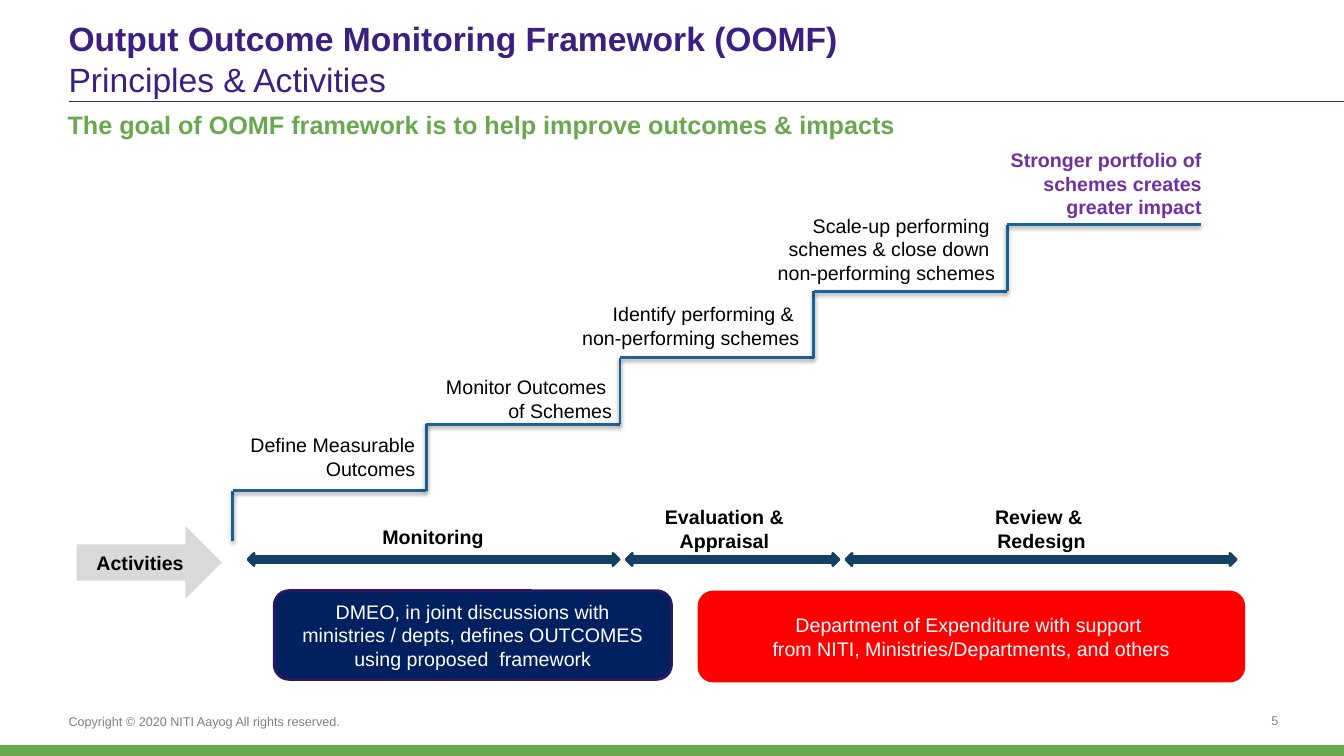
from typing import NamedTuple

from lxml import etree
from pptx import Presentation
from pptx.dml.color import RGBColor
from pptx.enum.shapes import MSO_CONNECTOR, MSO_SHAPE
from pptx.enum.text import MSO_ANCHOR, PP_ALIGN
from pptx.oxml.ns import qn
from pptx.util import Inches, Pt

LEFT, CENTER, RIGHT = PP_ALIGN.LEFT, PP_ALIGN.CENTER, PP_ALIGN.RIGHT
TOP, MIDDLE, BOTTOM = MSO_ANCHOR.TOP, MSO_ANCHOR.MIDDLE, MSO_ANCHOR.BOTTOM
RECT, ROUNDED = MSO_SHAPE.RECTANGLE, MSO_SHAPE.ROUNDED_RECTANGLE
RIGHT_ARROW, DOUBLE_ARROW = MSO_SHAPE.RIGHT_ARROW, MSO_SHAPE.LEFT_RIGHT_ARROW
STRAIGHT = MSO_CONNECTOR.STRAIGHT

COLORS = {
    "title": "3B2082", "green": "6AA84F", "gray": "D9D9D9", "footer": "7F7F7F",
    "number": "808080", "step": "1D6294", "phase": "134163", "navy": "002060",
    "navy_edge": "2C1860", "red": "FF0000", "impact": "7030A0",
    "black": "000000", "white": "FFFFFF",
}
FONT = "Arial"

STEP_LEFT, STEP_TOP = 2.31, 4.87
STEP_WIDTH, STEP_RISE, FIRST_RISE = 1.92, 0.66, 0.5
PHASE_TOP, PHASE_HEIGHT = 5.49, 0.12


class Box(NamedTuple):
    left: float
    top: float
    width: float
    height: float


class Step(NamedTuple):
    text: str
    box: Box
    color: str = "black"
    bold: bool = False


class Phase(NamedTuple):
    text: str
    label: Box
    arrow_left: float
    arrow_width: float


class Owner(NamedTuple):
    text: str
    box: Box
    fill: str
    edge: str | None


STEPS = [
    Step("Define Measurable Outcomes", Box(2, 4.25, 2.17, 0.57)),
    Step("Monitor Outcomes \nof Schemes", Box(4.07, 3.67, 2.05, 0.57)),
    Step("Identify performing & \nnon-performing schemes", Box(5.57, 2.95, 2.41, 0.57)),
    Step("Scale-up performing \nschemes & close down \nnon-performing schemes",
         Box(7.17, 2.07, 2.75, 0.81)),
    Step("Stronger portfolio of schemes creates greater impact",
         Box(9.71, 1.42, 2.26, 0.81), "impact", True),
]
PHASES = [
    Phase("Monitoring", Box(3.37, 5.16, 1.85, 0.34), 2.46, 3.68),
    Phase("Evaluation & Appraisal", Box(6.08, 4.96, 2.21, 0.57), 6.21, 2.11),
    Phase("Review & \nRedesign", Box(9.21, 4.96, 2.24, 0.57), 8.39, 3.87),
]
OWNERS = [
    Owner("DMEO, in joint discussions with ministries / depts, defines OUTCOMES "
          "using proposed  framework", Box(2.72, 5.86, 3.94, 0.88), "navy", "navy_edge"),
    Owner("Department of Expenditure with support \n"
          "from NITI, Ministries/Departments, and others",
          Box(6.92, 5.86, 5.43, 0.91), "red", None),
]


def rgb(name: str) -> RGBColor:
    return RGBColor.from_string(COLORS[name])


def write(sp, text: str, *, size: float = 14, color: str = "black", bold: bool = False,
          align=LEFT, anchor=MIDDLE, after: float = 0) -> None:
    """Add one paragraph to a shape; a newline becomes a line break."""
    tf = sp.text_frame
    tf.word_wrap = True
    tf.vertical_anchor = anchor
    p = tf.add_paragraph() if tf.text else tf.paragraphs[0]
    p.alignment = align
    p.space_after = Pt(after)
    for i, line in enumerate(text.split("\n")):
        if i:
            p.add_line_break()
        r = p.add_run()
        r.text = line
        r.font.name, r.font.size, r.font.bold = FONT, Pt(size), bold
        r.font.color.rgb = rgb(color)


def add_text_box(s, box: Box, inset: float = 0):
    sp = s.shapes.add_textbox(*map(Inches, box))
    tf = sp.text_frame
    tf.margin_left = tf.margin_right = tf.margin_top = tf.margin_bottom = Inches(inset)
    return sp


def add_shape(s, kind, box: Box, fill: str, edge: str | None = None):
    sp = s.shapes.add_shape(kind, *map(Inches, box))
    sp.shadow.inherit = False
    sp.fill.solid()
    sp.fill.fore_color.rgb = rgb(fill)
    if edge:
        sp.line.color.rgb = rgb(edge)
        sp.line.width = Pt(2)
    else:
        sp.line.fill.background()
    return sp


def add_line(s, x1: float, y1: float, x2: float, y2: float, color: str,
             width: float, shadow: bool = False) -> None:
    line = s.shapes.add_connector(STRAIGHT, *map(Inches, (x1, y1, x2, y2)))
    line.line.color.rgb = rgb(color)
    line.line.width = Pt(width)
    effects = etree.SubElement(line._element.spPr, qn("a:effectLst"))
    if shadow:
        outer = etree.SubElement(effects, qn("a:outerShdw"), blurRad=str(Pt(3)),
                                 dist=str(Pt(1.6)), dir="5400000", rotWithShape="0")
        shade = etree.SubElement(outer, qn("a:srgbClr"), val=COLORS["black"])
        etree.SubElement(shade, qn("a:alpha"), val="38000")


def add_frame(s) -> None:
    """Draw the heading, the footer and their rules."""
    add_line(s, 0.68, 1.01, 13.33, 1.01, "title", 1)
    write(add_text_box(s, Box(11.54, 7.03, 1.14, 0.19)), "5",
          size=9, color="number", align=RIGHT, anchor=BOTTOM)
    write(add_text_box(s, Box(0.68, 7.07, 4.22, 0.16)),
          "Copyright © 2020 NITI Aayog All rights reserved.",
          size=9, color="footer", anchor=BOTTOM)
    add_shape(s, RECT, Box(0, 7.39, 13.33, 0.11), "green")
    title = add_text_box(s, Box(0.68, 0.12, 11.99, 0.86))
    write(title, "Output Outcome Monitoring Framework (OOMF)",
          size=24, color="title", bold=True, anchor=BOTTOM)
    write(title, "Principles & Activities", size=24, color="title", anchor=BOTTOM)
    write(add_text_box(s, Box(0.67, 1.03, 12.01, 0.41)),
          "The goal of OOMF framework is to help improve outcomes & impacts",
          size=18, color="green", bold=True, after=4)


def add_staircase(s) -> None:
    for i, step in enumerate(STEPS):
        x, y = STEP_LEFT + i * STEP_WIDTH, STEP_TOP - i * STEP_RISE
        rise = STEP_RISE if i else FIRST_RISE
        add_line(s, x, y + rise, x, y, "step", 2, shadow=True)
        add_line(s, x, y, x + STEP_WIDTH, y, "step", 2, shadow=True)
        write(add_text_box(s, step.box, 0.05), step.text, color=step.color,
              bold=step.bold, align=RIGHT, anchor=TOP)


def add_activities(s) -> None:
    write(add_shape(s, RIGHT_ARROW, Box(0.76, 5.22, 1.44, 0.72), "gray"),
          "Activities", bold=True, align=CENTER)
    for phase in PHASES:
        bar = Box(phase.arrow_left, PHASE_TOP, phase.arrow_width, PHASE_HEIGHT)
        add_shape(s, DOUBLE_ARROW, bar, "phase", "phase")
        write(add_text_box(s, phase.label, 0.05), phase.text,
              bold=True, align=CENTER, anchor=TOP)
    for owner in OWNERS:
        write(add_shape(s, ROUNDED, owner.box, owner.fill, owner.edge),
              owner.text, color="white", align=CENTER)


def main() -> None:
    prs = Presentation()
    prs.slide_width, prs.slide_height = Inches(13.33), Inches(7.5)
    s = prs.slides.add_slide(prs.slide_layouts[6])
    add_frame(s)
    add_staircase(s)
    add_activities(s)
    prs.save("out.pptx")


if __name__ == "__main__":
    main()
